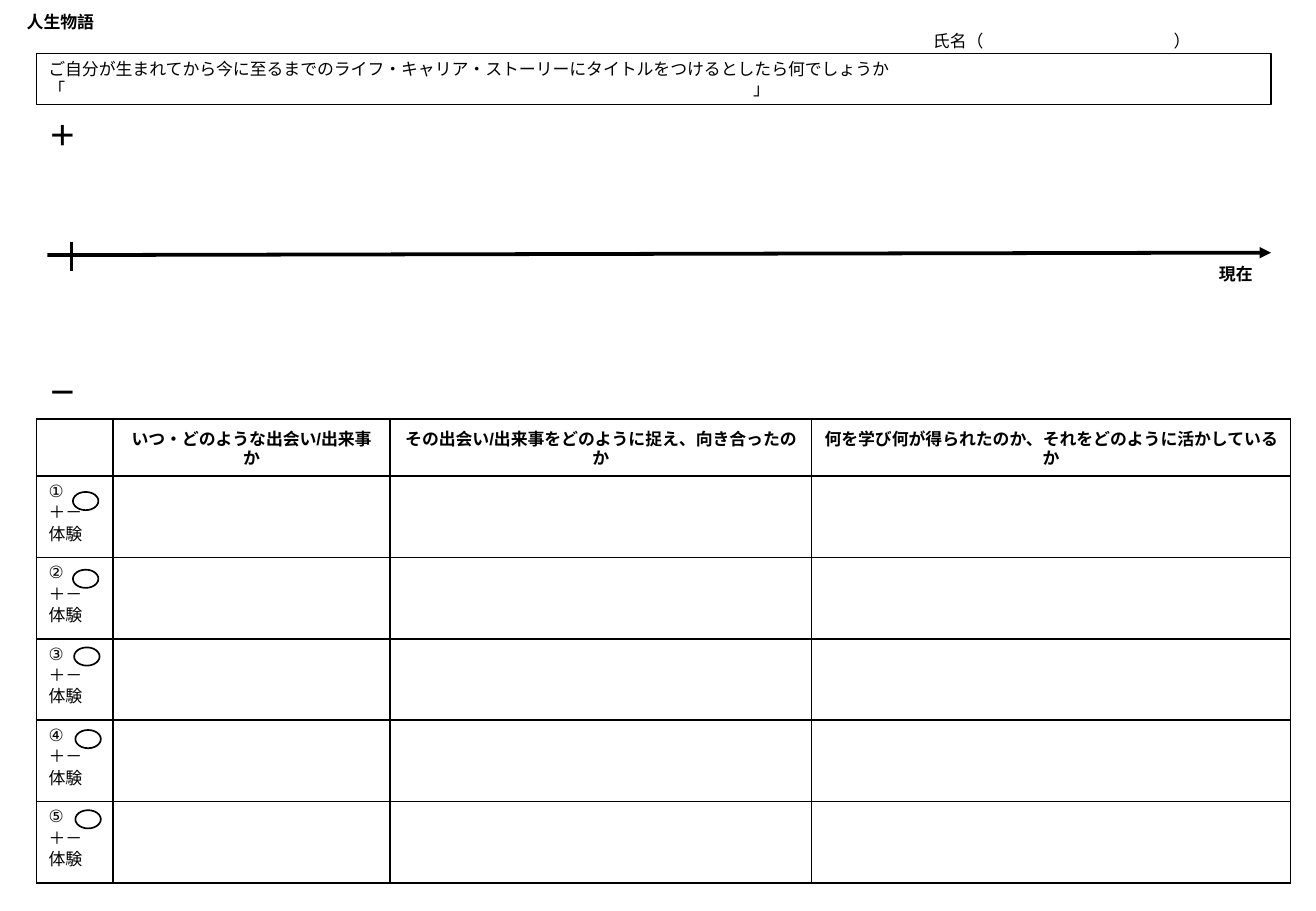
import pptx
import pptx.util
import pptx.dml.color
import pptx.enum.shapes
import pptx.enum.text
import pptx.oxml
import pptx.oxml.ns
import lxml.etree

Inches, Pt = pptx.util.Inches, pptx.util.Pt
ALIGN = pptx.enum.text.PP_ALIGN
ANCHOR = pptx.enum.text.MSO_ANCHOR
SHAPE = pptx.enum.shapes.MSO_SHAPE
BLACK = pptx.dml.color.RGBColor(0, 0, 0)
WHITE = pptx.dml.color.RGBColor(255, 255, 255)
ARIAL, NOTO = "Arial", "Noto Sans CJK JP"

TITLE = "人生物語"
NAME = "氏名（\t）"
ASK = "ご自分が生まれてから今に至るまでのライフ・キャリア・ストーリーにタイトルをつけるとしたら何でしょうか\n「\t」"
MARKS = [  # text, left, top, width, height, size
    ("＋", 0.3, 0.92, 0.41, 0.38, 17),
    ("－", 0.3, 3.04, 0.41, 0.38, 17),
    ("現在", 9.87, 2.12, 0.6, 0.27, 10),
]
HEADS = [
    "",
    "いつ・どのような出会い/出来事か",
    "その出会い/出来事をどのように捉え、向き合ったのか",
    "何を学び何が得られたのか、それをどのように活かしているか",
]
NUMBERS = "①②③④⑤"
KIND = "＋－\n体験"
COLS = [0.63, 2.28, 3.47, 3.94]
HEAD_H, ROW_H = 0.47, 0.67
OVALS = [(0.6, 4.05), (0.6, 4.69), (0.61, 5.33), (0.62, 6.01), (0.62, 6.67)]


def write(frame, text, size=10, bold=False, font=ARIAL, align=ALIGN.LEFT, before=0):
    frame.text = text
    frame.word_wrap = True
    for para in frame.paragraphs:
        para.alignment = align
        para.space_before = Pt(before)
        for run in para.runs:
            run.font.size, run.font.bold, run.font.name = Pt(size), bold, font
            run.font.color.rgb = BLACK
            east = lxml.etree.SubElement(run._r.get_or_add_rPr(), pptx.oxml.ns.qn("a:ea"))
            east.set("typeface", font)


def add_tab(para, inches):
    props = para._p.get_or_add_pPr()
    tabs = lxml.etree.SubElement(props, pptx.oxml.ns.qn("a:tabLst"))
    tab = lxml.etree.SubElement(tabs, pptx.oxml.ns.qn("a:tab"))
    tab.set("pos", str(Inches(inches)))
    tab.set("algn", "l")


def add_box(slide, left, top, width, height):
    return slide.shapes.add_textbox(Inches(left), Inches(top), Inches(width), Inches(height))


def add_form(slide, kind, left, top, width, height):
    form = slide.shapes.add_shape(kind, Inches(left), Inches(top), Inches(width), Inches(height))
    form.shadow.inherit = False
    form.line.color.rgb, form.line.width = BLACK, Pt(1)
    return form


def add_line(slide, start, end, width):
    points = [Inches(v) for v in start + end]
    line = slide.shapes.add_connector(pptx.enum.shapes.MSO_CONNECTOR.STRAIGHT, *points)
    line.line.color.rgb, line.line.width = BLACK, Pt(width)
    lxml.etree.SubElement(line._element.spPr, pptx.oxml.ns.qn("a:effectLst"))
    return line


def add_border(cell):
    props = cell._tc.get_or_add_tcPr()
    for place, side in enumerate(("lnL", "lnR", "lnT", "lnB")):
        props.insert(place, pptx.oxml.parse_xml(
            f'<a:{side} {pptx.oxml.ns.nsdecls("a")} w="12700"><a:solidFill>'
            f'<a:srgbClr val="{BLACK}"/></a:solidFill></a:{side}>'))


def add_grid(slide):
    rows = [HEADS] + [[f"{n}\n{KIND}", "", "", ""] for n in NUMBERS]
    high = HEAD_H + ROW_H * len(NUMBERS)
    grid = slide.shapes.add_table(len(rows), len(COLS), Inches(0.3), Inches(3.45),
                                  Inches(sum(COLS)), Inches(high)).table
    for col, width in zip(grid.columns, COLS):
        col.width = Inches(width)
    for r, texts in enumerate(rows):
        head = r == 0
        grid.rows[r].height = Inches(HEAD_H if head else ROW_H)
        for c, text in enumerate(texts):
            cell = grid.cell(r, c)
            cell.fill.background()
            cell.margin_top = Inches(0.02 if head else 0.05)
            cell.margin_bottom = 0
            cell.vertical_anchor = ANCHOR.MIDDLE if head else ANCHOR.TOP
            write(cell.text_frame, text, bold=head, before=1.5,
                  align=ALIGN.CENTER if head else ALIGN.LEFT)
            add_border(cell)


def main():
    deck = pptx.Presentation()
    deck.slide_width, deck.slide_height = Inches(10.83), Inches(7.5)
    slide = deck.slides.add_slide(deck.slide_layouts[5])

    title = slide.shapes.title
    title.left, title.top = Inches(0.12), Inches(0.04)
    title.width, title.height = Inches(3), Inches(0.27)
    write(title.text_frame, TITLE, bold=True, font=NOTO)
    title.text_frame.vertical_anchor = ANCHOR.MIDDLE

    name = add_box(slide, 7.58, 0.2, 2.6, 0.27).text_frame
    write(name, NAME, font=NOTO)
    add_tab(name.paragraphs[0], 1.98)

    ask = add_form(slide, SHAPE.RECTANGLE, 0.3, 0.44, 10.16, 0.42)
    ask.fill.solid()
    ask.fill.fore_color.rgb = WHITE
    write(ask.text_frame, ASK)
    ask.text_frame.vertical_anchor = ANCHOR.MIDDLE
    add_tab(ask.text_frame.paragraphs[1], 5.8)

    for text, left, top, width, height, size in MARKS:
        mark = add_box(slide, left, top, width, height).text_frame
        write(mark, text, size, bold=True, align=ALIGN.CENTER)
        mark.vertical_anchor = ANCHOR.MIDDLE

    axis = add_line(slide, (0.39, 2.1), (10.46, 2.08), 2.25)
    tail = lxml.etree.SubElement(axis.line._get_or_add_ln(), pptx.oxml.ns.qn("a:tailEnd"))
    tail.set("type", "triangle")
    add_line(slide, (0.59, 1.99), (0.59, 2.23), 1.5)

    add_grid(slide)
    for left, top in OVALS:
        add_form(slide, SHAPE.OVAL, left, top, 0.21, 0.15).fill.background()
    deck.save("out.pptx")


if __name__ == "__main__":
    main()
